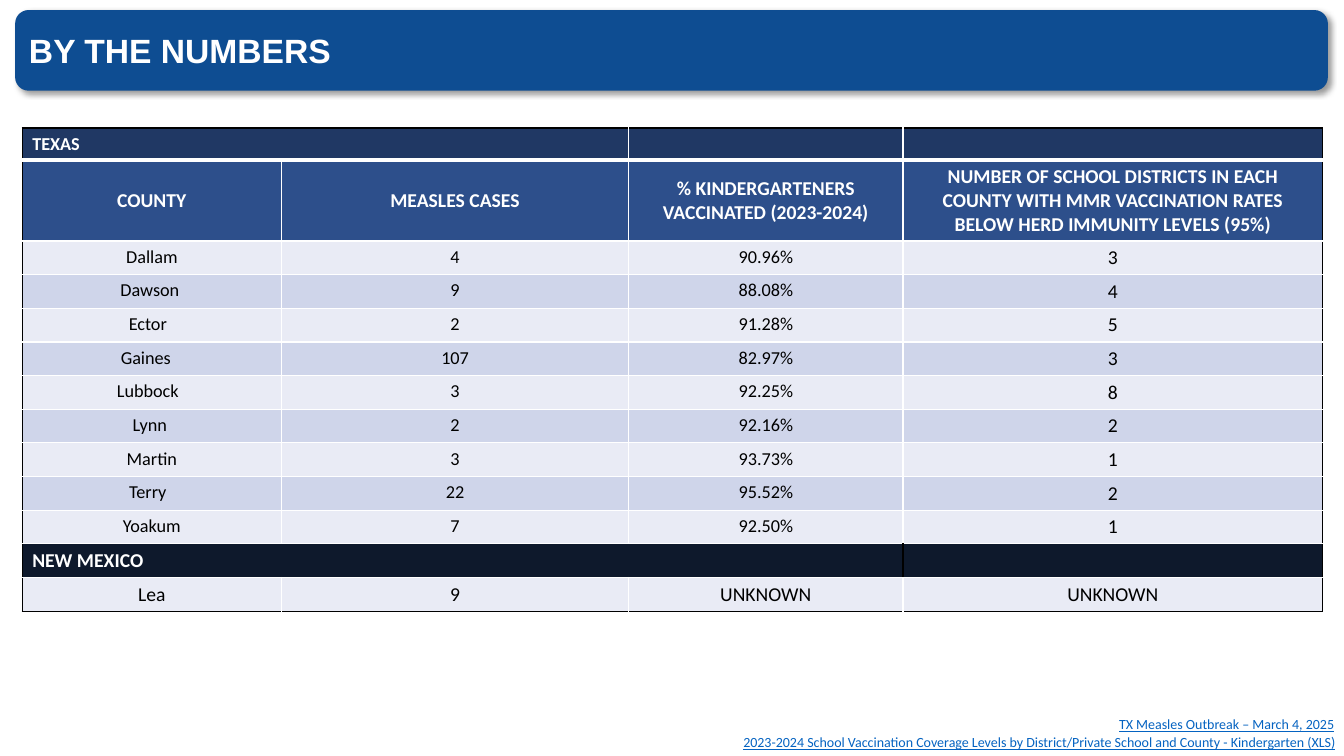
from collections import namedtuple

from lxml.etree import SubElement
from pptx import Presentation
from pptx.dml.color import RGBColor
from pptx.enum.shapes import MSO_SHAPE
from pptx.enum.text import MSO_ANCHOR, PP_ALIGN
from pptx.oxml.ns import qn
from pptx.util import Inches, Pt

WHITE = RGBColor(0xFF, 0xFF, 0xFF)
BLACK = RGBColor(0x00, 0x00, 0x00)
BANNER_BLUE = RGBColor(0x0E, 0x4D, 0x92)
LINK_BLUE = RGBColor(0x05, 0x63, 0xC1)
TEXAS_NAVY = RGBColor(0x20, 0x38, 0x64)
HEADING_BLUE = RGBColor(0x2D, 0x4F, 0x8B)
NEW_MEXICO_NAVY = RGBColor(0x0E, 0x19, 0x2C)
BANDS = (RGBColor(0xE9, 0xEB, 0xF5), RGBColor(0xCF, 0xD5, 0xEA))

Box = namedtuple("Box", "left top width height")

HEADINGS = (
    "COUNTY",
    "MEASLES CASES",
    "% KINDERGARTENERS VACCINATED (2023-2024)",
    "NUMBER OF SCHOOL DISTRICTS IN EACH\n"
    "COUNTY WITH MMR VACCINATION RATES\n"
    "BELOW HERD IMMUNITY LEVELS (95%)",
)
TEXAS_COUNTIES = (
    ("Dallam", "4", "90.96%", "3"),
    ("Dawson", "9", "88.08%", "4"),
    ("Ector", "2", "91.28%", "5"),
    ("Gaines", "107", "82.97%", "3"),
    ("Lubbock", "3", "92.25%", "8"),
    ("Lynn", "2", "92.16%", "2"),
    ("Martin", "3", "93.73%", "1"),
    ("Terry", "22", "95.52%", "2"),
    ("Yoakum", "7", "92.50%", "1"),
)
LEA_COUNTY = ("Lea", "9", "UNKNOWN", "UNKNOWN")
COUNTY_NUDGES = {"Dawson": 1, "Ector": 2, "Gaines": 3, "Lubbock": 2, "Lynn": 1, "Terry": 2}
NUDGE = 0.04
COLUMN_WEIGHTS = (257, 344, 272, 416)
TITLE_ROW, HEADING_ROW, COUNTY_ROW = 0.32, 0.8, 0.33


def inches(box):
    return [Inches(length) for length in box]


def add_span(para, text, size, color, font="Calibri", bold=False, underline=False):
    span = para.add_run()
    span.text = text
    span.font.name = font
    span.font.size = Pt(size)
    span.font.bold = bold
    span.font.underline = underline
    span.font.color.rgb = color


def add_banner(page, box, title):
    banner = page.shapes.add_shape(MSO_SHAPE.ROUNDED_RECTANGLE, *inches(box))
    banner.fill.solid()
    banner.fill.fore_color.rgb = BANNER_BLUE
    banner.line.fill.background()
    banner.shadow.inherit = False
    effects = banner._element.spPr.find(qn("a:effectLst"))
    shadow = SubElement(effects, qn("a:outerShdw"), blurRad=str(Pt(4)), dist=str(Pt(3)),
                        dir="2700000", algn="tl", rotWithShape="0")
    color = SubElement(shadow, qn("a:srgbClr"), val=str(BLACK))
    SubElement(color, qn("a:alpha"), val="40000")
    frame = banner.text_frame
    frame.vertical_anchor = MSO_ANCHOR.MIDDLE
    para = frame.paragraphs[0]
    para.alignment = PP_ALIGN.LEFT
    add_span(para, title, 24, WHITE, font="Arial", bold=True)


def add_source(page, box, text, line_spacing=None):
    frame = page.shapes.add_textbox(*inches(box)).text_frame
    frame.word_wrap = True
    para = frame.paragraphs[0]
    para.alignment = PP_ALIGN.RIGHT
    para.line_spacing = line_spacing
    add_span(para, text, 10, LINK_BLUE, underline=True)


def set_border(cell, side, color, width=1):
    line = SubElement(cell._tc.get_or_add_tcPr(), qn(f"a:ln{side}"), w=str(Pt(width)))
    fill = SubElement(line, qn("a:solidFill"))
    SubElement(fill, qn("a:srgbClr"), val=str(color))


def style_cell(cell, fill, black_sides, bottom_width=1):
    for side in "LRTB":
        set_border(cell, side, BLACK if side in black_sides else WHITE,
                   bottom_width if side == "B" else 1)
    cell.fill.solid()
    cell.fill.fore_color.rgb = fill


def write_cell(cell, text, size, color=BLACK, bold=False, align=PP_ALIGN.CENTER):
    frame = cell.text_frame
    for index, line in enumerate(text.split("\n")):
        para = frame.add_paragraph() if index else frame.paragraphs[0]
        para.alignment = align
        if line:
            add_span(para, line, size, color, bold=bold)
        else:
            SubElement(para._p, qn("a:endParaRPr"), sz=str(size * 100))


def write_title_row(cells, title, size, span):
    for index, cell in enumerate(cells):
        write_cell(cell, "" if index else title, size, WHITE, True, PP_ALIGN.LEFT)
    cells[0].merge(cells[span - 1])


def add_county_table(page, box):
    new_mexico = len(TEXAS_COUNTIES) + 2
    last_row, last_column = new_mexico + 1, len(HEADINGS) - 1
    table = page.shapes.add_table(last_row + 1, last_column + 1, *inches(box)).table
    for column, weight in zip(table.columns, COLUMN_WEIGHTS):
        column.width = Inches(box.width * weight / sum(COLUMN_WEIGHTS))
    row_fills = {0: TEXAS_NAVY, 1: HEADING_BLUE, new_mexico: NEW_MEXICO_NAVY, last_row: BANDS[0]}
    row_heights = {0: TITLE_ROW, 1: HEADING_ROW}

    for index, row in enumerate(table.rows):
        row.height = Inches(row_heights.get(index, COUNTY_ROW))
        for column, cell in enumerate(row.cells):
            edges = {"L": column == 0, "R": column == last_column,
                     "T": index == 0, "B": index == last_row}
            black_sides = {side for side, outer in edges.items() if outer}
            if index == new_mexico:
                black_sides |= {"L", "R"}
            style_cell(cell, row_fills.get(index, BANDS[index % 2]), black_sides,
                       3 if index == 0 else 1)

    rows = [list(row.cells) for row in table.rows]
    write_title_row(rows[0], "TEXAS", 13, 2)
    write_title_row(rows[new_mexico], "NEW MEXICO", 14, 3)
    for cell, heading in zip(rows[1], HEADINGS):
        cell.vertical_anchor = MSO_ANCHOR.MIDDLE
        write_cell(cell, heading, 14, WHITE, True)
    for cells, county in zip(rows[2:], TEXAS_COUNTIES):
        cells[0].margin_right = Inches(0.1 + NUDGE * COUNTY_NUDGES.get(county[0], 0))
        for column, text in enumerate(county):
            write_cell(cells[column], text, 14 if column == last_column else 13)
    for cell, text in zip(rows[last_row], LEA_COUNTY):
        write_cell(cell, text, 14)


def main():
    deck = Presentation()
    deck.slide_width, deck.slide_height = Inches(13.33), Inches(7.5)
    page = deck.slides.add_slide(deck.slide_layouts[6])
    add_banner(page, Box(0.15, 0.1, 13.02, 0.8), "BY THE NUMBERS")
    add_source(page, Box(2.61, 7.23, 10.73, 0.27),
               "2023-2024 School Vaccination Coverage Levels by District/Private School "
               "and County - Kindergarten (XLS)")
    add_source(page, Box(6.67, 6.72, 6.66, 0.51), "TX Measles Outbreak – March 4, 2025", Pt(36))
    add_county_table(page, Box(0.22, 1.27, 12.9, 4.79))
    deck.save("out.pptx")


if __name__ == "__main__":
    main()
